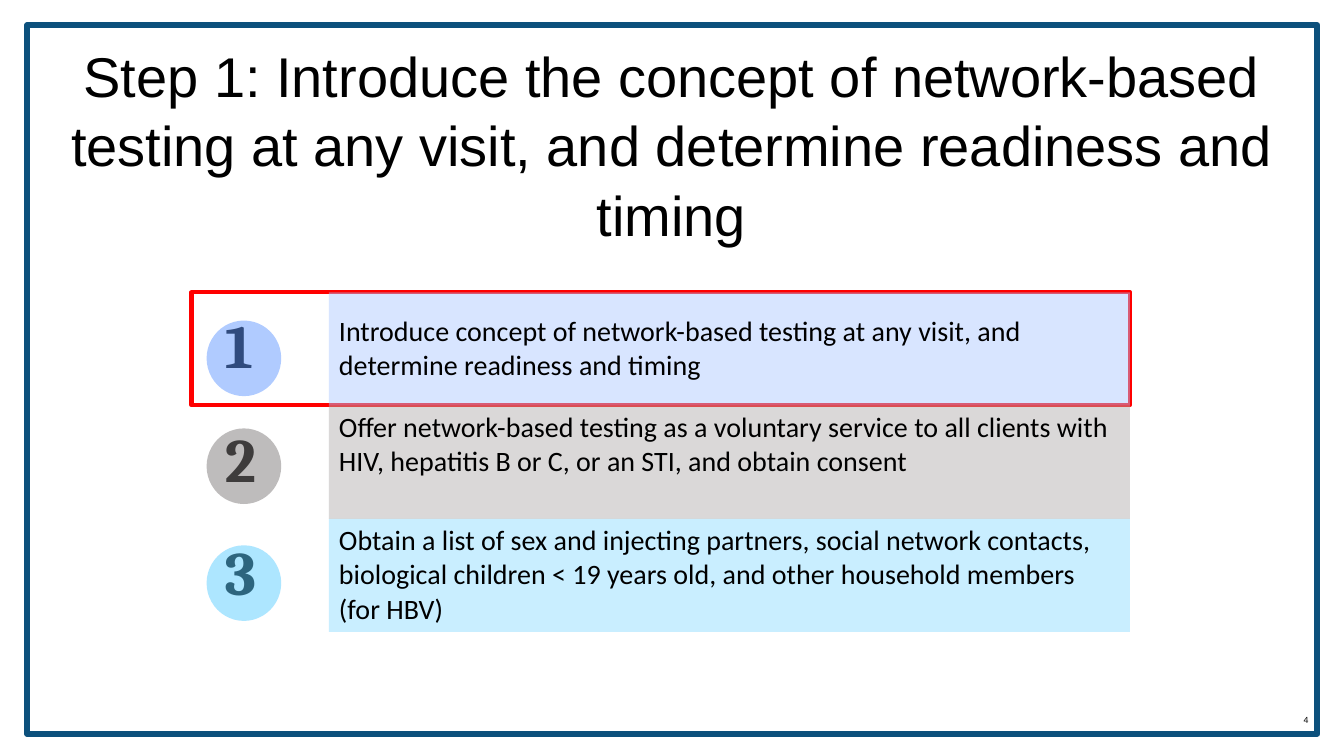
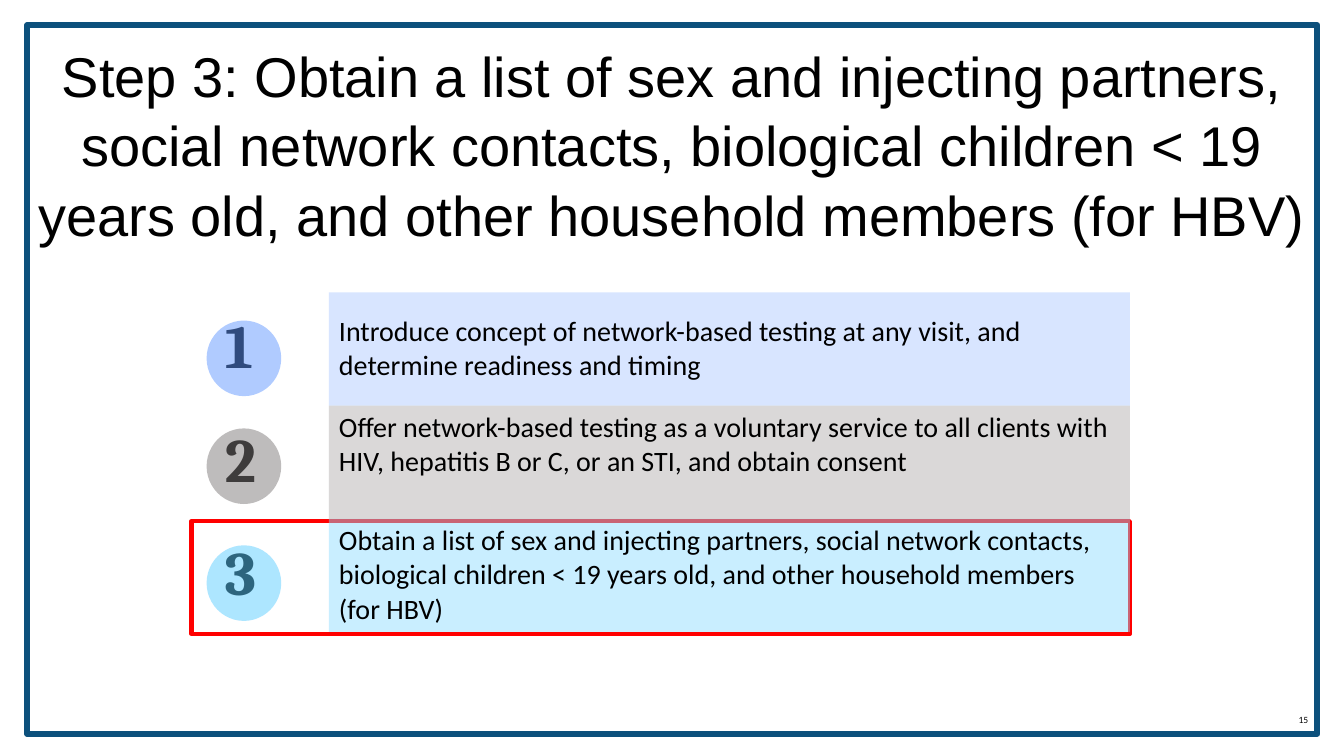
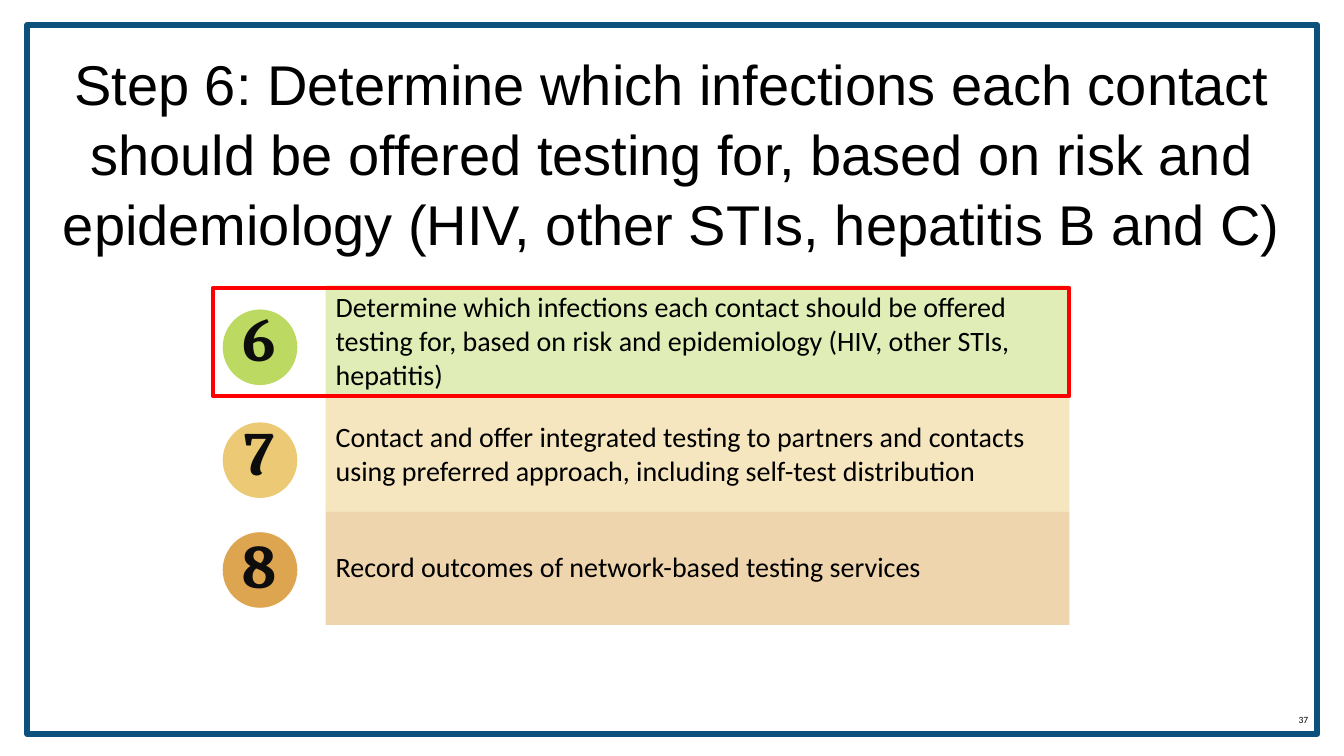
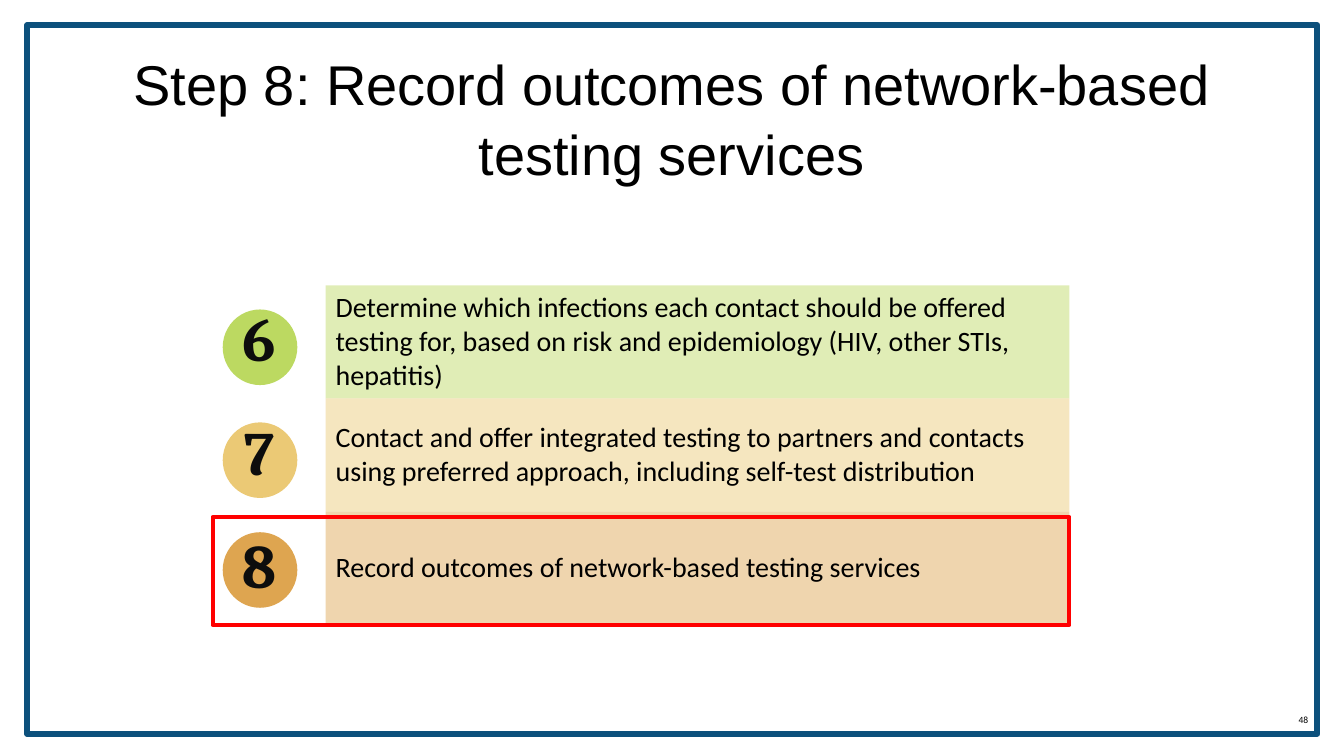
from dataclasses import dataclass

from lxml.etree import SubElement
from pptx import Presentation
from pptx.dml.color import RGBColor
from pptx.dml.fill import FillFormat
from pptx.enum.shapes import MSO_SHAPE
from pptx.enum.text import MSO_ANCHOR, PP_ALIGN
from pptx.oxml.ns import qn
from pptx.shapes.autoshape import Shape
from pptx.slide import Slide
from pptx.text.text import TextFrame
from pptx.util import Pt

COLOURS = {
    "frame": "0C507C",
    "highlight": "FF0000",
    "text": "000000",
    "number": "0D0D0D",
    "blue": "5892FF",
    "pale blue": "ABC8FF",
    "grey": "767171",
    "pale grey": "AFABAB",
    "sky": "52CAFF",
    "pale sky": "8BDBFF",
    "green": "BCD961",
    "yellow": "EBC975",
    "orange": "DEA550",
}
TITLE_FONT = {"name": "Arial", "size": Pt(40)}
NUMBER_FONT = {"name": "Cambria", "size": Pt(44), "bold": True}
STEP_FONT = {"name": "Calibri", "size": Pt(20), "bold": False}
PAGE_NUMBER_FONT = {"name": "Calibri", "size": Pt(6.8)}
TITLE_LINE_SPACING = 1.04
ROW_HEIGHT = 80.88
BADGE_WIDTH, BADGE_HEIGHT = 53.28, 54
CELL_OPACITY = 46
NO_STYLE = "{2D5ABB26-0587-4C30-8999-92F81FD0307C}"


@dataclass(frozen=True)
class Area:
    left: float
    top: float
    width: float
    height: float

    def lengths(self) -> tuple[Pt, Pt, Pt, Pt]:
        return Pt(self.left), Pt(self.top), Pt(self.width), Pt(self.height)


@dataclass(frozen=True)
class Step:
    number: int
    text: str
    badge_top: float
    badge_colour: str
    fill_colour: str
    anchor: MSO_ANCHOR = MSO_ANCHOR.MIDDLE


@dataclass(frozen=True)
class StepTable:
    steps: tuple[Step, ...]
    left: float
    top: float
    columns: tuple[float, float]
    number_align: PP_ALIGN
    badge_left: float
    badge_opacity: int
    badges_in_front: bool


@dataclass(frozen=True)
class Page:
    number: int
    title: str
    title_area: Area
    table: StepTable
    highlight: Area


FRAME = Area(19.44, 18, 921.6, 506.16)
PAGE_NUMBER = Area(893.52, 499.68, 46.08, 28.8)

FIRST_STEPS = StepTable(
    steps=(
        Step(1, "Introduce concept of network-based testing at any visit, and "
             "determine readiness and timing", 228.96, "blue", "pale blue"),
        Step(2, "Offer network-based testing as a voluntary service to all clients "
             "with HIV, hepatitis B or C, or an STI, and obtain consent",
             306, "grey", "pale grey", MSO_ANCHOR.TOP),
        Step(3, "Obtain a list of sex and injecting partners, social network contacts, "
             "biological children < 19 years old, and other household members (for HBV)",
             389.52, "sky", "pale sky", MSO_ANCHOR.TOP),
    ),
    left=153.36, top=208.8, columns=(81.6, 572.16), number_align=PP_ALIGN.LEFT,
    badge_left=147.6, badge_opacity=47, badges_in_front=True,
)
LAST_STEPS = StepTable(
    steps=(
        Step(6, "Determine which infections each contact should be offered testing for, "
             "based on risk and epidemiology (HIV, other STIs, hepatitis)",
             221.04, "green", "green"),
        Step(7, "Contact and offer integrated testing to partners and contacts using "
             "preferred approach, including self-test distribution",
             301.68, "yellow", "yellow"),
        Step(8, "Record outcomes of network-based testing services",
             380.16, "orange", "orange"),
    ),
    left=137.52, top=203.76, columns=(95.04, 531.36), number_align=PP_ALIGN.CENTER,
    badge_left=159.12, badge_opacity=100, badges_in_front=False,
)

PAGES = (
    Page(4, "Step 1: Introduce the concept of network-based testing at any visit, and "
         "determine readiness and timing",
         Area(42.48, 27.5, 874.08, 177), FIRST_STEPS, Area(136.8, 208.8, 670.32, 80.64)),
    Page(15, "Step 3: Obtain a list of sex and injecting partners, social network contacts, "
         "biological children < 19 years old, and other household members (for HBV)",
         Area(23.76, 27.5, 911.52, 177), FIRST_STEPS, Area(136.8, 372.24, 670.32, 80.64)),
    Page(37, "Step 6: Determine which infections each contact should be offered testing for, "
         "based on risk and epidemiology (HIV, other STIs, hepatitis B and C)",
         Area(42.48, 33.5, 874.08, 239), LAST_STEPS, Area(151.92, 205.92, 612, 77.04)),
    Page(48, "Step 8: Record outcomes of network-based testing services",
         Area(42.48, 33.5, 874.08, 239), LAST_STEPS, Area(151.92, 369.36, 612, 77.04)),
)


def rgb(name: str) -> RGBColor:
    return RGBColor.from_string(COLOURS[name])


def set_fill(fill: FillFormat, owner, colour: str, opacity: int) -> None:
    """Fill with a colour; owner is the XML element that holds the fill."""
    fill.solid()
    fill.fore_color.rgb = rgb(colour)
    if opacity < 100:
        colour_element = owner.find(f".//{qn('a:solidFill')}/{qn('a:srgbClr')}")
        SubElement(colour_element, qn("a:alpha")).set("val", str(opacity * 1000))


def write(frame: TextFrame, text: str, font: dict, colour: str = "text",
          align: PP_ALIGN = PP_ALIGN.LEFT) -> None:
    para = frame.paragraphs[0]
    para.alignment = align
    span = para.add_run()
    span.text = text
    for name, value in font.items():
        setattr(span.font, name, value)
    span.font.color.rgb = rgb(colour)


def add_text(slide: Slide, area: Area, margins: tuple[float, float]) -> TextFrame:
    frame = slide.shapes.add_textbox(*area.lengths()).text_frame
    frame.word_wrap = True
    frame.margin_left = frame.margin_right = Pt(margins[0])
    frame.margin_top = frame.margin_bottom = Pt(margins[1])
    return frame


def add_plain_shape(slide: Slide, kind: MSO_SHAPE, area: Area) -> Shape:
    shape = slide.shapes.add_shape(kind, *area.lengths())
    shape.shadow.inherit = False
    return shape


def add_outline(slide: Slide, area: Area, colour: str, width: float) -> None:
    box = add_plain_shape(slide, MSO_SHAPE.RECTANGLE, area)
    box.fill.background()
    box.line.color.rgb = rgb(colour)
    box.line.width = Pt(width)


def add_title(slide: Slide, page: Page) -> None:
    frame = add_text(slide, page.title_area, (0, 0))
    write(frame, page.title, TITLE_FONT, align=PP_ALIGN.CENTER)
    frame.paragraphs[0].line_spacing = TITLE_LINE_SPACING


def add_page_number(slide: Slide, number: int) -> None:
    frame = add_text(slide, PAGE_NUMBER, (5.04, 2.88))
    frame.vertical_anchor = MSO_ANCHOR.MIDDLE
    write(frame, str(number), PAGE_NUMBER_FONT, align=PP_ALIGN.RIGHT)


def add_badges(slide: Slide, table: StepTable) -> None:
    for step in table.steps:
        area = Area(table.badge_left, step.badge_top, BADGE_WIDTH, BADGE_HEIGHT)
        badge = add_plain_shape(slide, MSO_SHAPE.OVAL, area)
        set_fill(badge.fill, badge.element.spPr, step.badge_colour, table.badge_opacity)
        badge.line.fill.background()


def add_step_table(slide: Slide, table: StepTable) -> None:
    area = Area(table.left, table.top, sum(table.columns), ROW_HEIGHT * len(table.steps))
    grid = slide.shapes.add_table(len(table.steps), 2, *area.lengths()).table
    grid.first_row = grid.horz_banding = False
    grid._tbl.tblPr.find(qn("a:tableStyleId")).text = NO_STYLE
    for column, width in zip(grid.columns, table.columns):
        column.width = Pt(width)
    for row, step in zip(grid.rows, table.steps):
        row.height = Pt(ROW_HEIGHT)
        number_cell, text_cell = row.cells
        number_cell.fill.background()
        number_cell.vertical_anchor = MSO_ANCHOR.MIDDLE
        write(number_cell.text_frame, str(step.number), NUMBER_FONT, "number",
              table.number_align)
        set_fill(text_cell.fill, text_cell._tc, step.fill_colour, CELL_OPACITY)
        text_cell.vertical_anchor = step.anchor
        write(text_cell.text_frame, step.text, STEP_FONT)


def add_page(deck: Presentation, page: Page) -> None:
    slide = deck.slides.add_slide(deck.slide_layouts[6])
    add_outline(slide, FRAME, "frame", 4.25)
    add_page_number(slide, page.number)
    add_title(slide, page)
    if page.table.badges_in_front:
        add_outline(slide, page.highlight, "highlight", 3)
        add_step_table(slide, page.table)
        add_badges(slide, page.table)
    else:
        add_badges(slide, page.table)
        add_step_table(slide, page.table)
        add_outline(slide, page.highlight, "highlight", 3)


def main() -> None:
    deck = Presentation()
    deck.slide_width, deck.slide_height = Pt(960), Pt(540)
    for page in PAGES:
        add_page(deck, page)
    deck.save("out.pptx")


if __name__ == "__main__":
    main()
